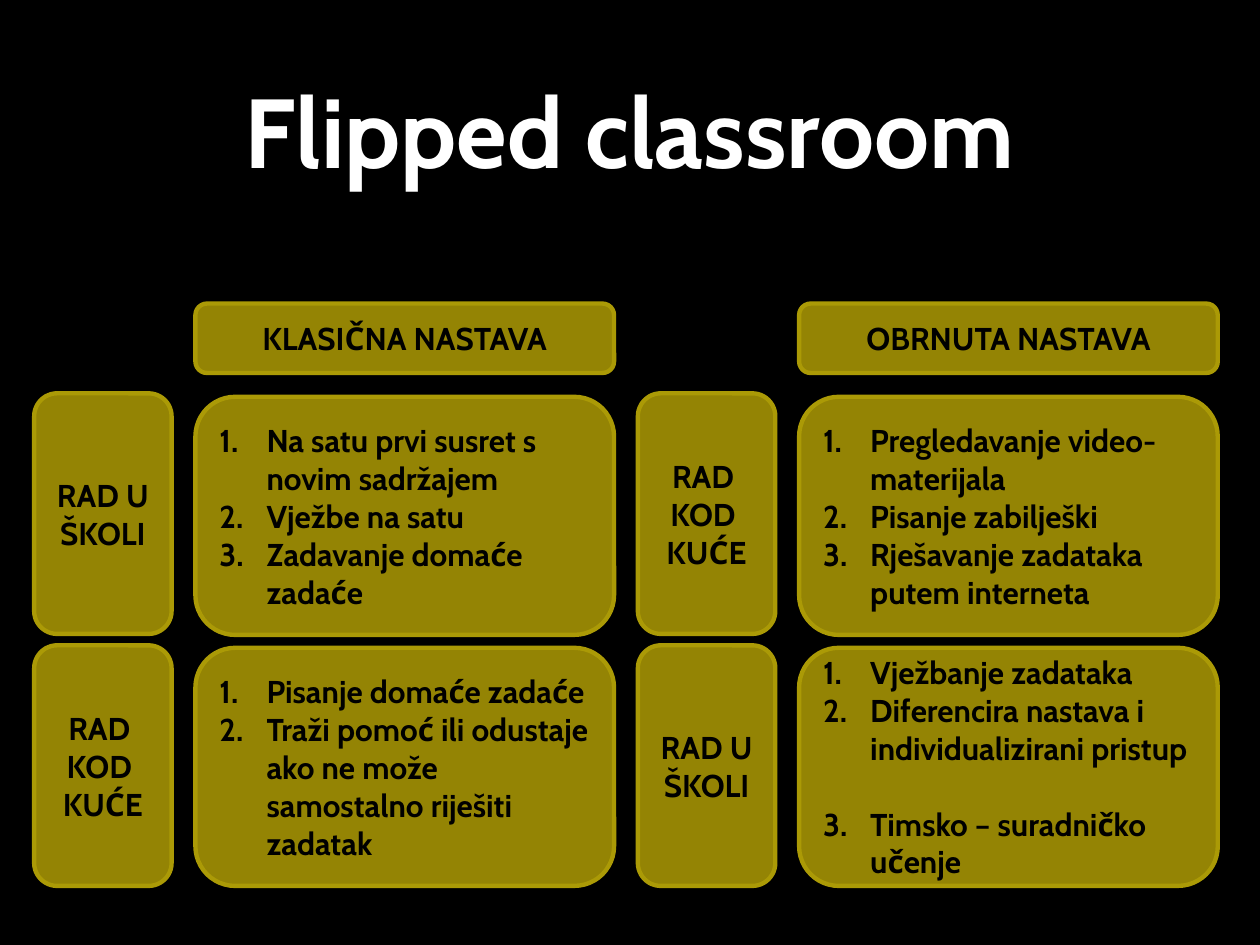
from dataclasses import dataclass

from lxml import etree
from pptx import Presentation
from pptx import util as u
from pptx.dml.color import RGBColor
from pptx.enum import shapes, text
from pptx.oxml.ns import qn

HUE = {"back": "000000", "title": "FFFFFF", "ink": "000000",
       "fill": "F2D908", "edge": "AB9A06"}
FONT = "Cabin"
ALPHA = 61000
INDENT = u.Cm(0.95)
GAP = 21.6


@dataclass
class Row:
    label: list[str]
    items: list[str]
    gap_at: int = -1


@dataclass
class Group:
    left: float
    head: str
    rows: list[Row]


SCHOOL = ["RAD U ŠKOLI"]
HOME = ["RAD ", "KOD ", "KUĆE"]
GROUPS = [
    Group(0.69, "KLASIČNA NASTAVA", [
        Row(SCHOOL, ["Na satu prvi susret s novim sadržajem",
                     "Vježbe na satu", "Zadavanje domaće zadaće"]),
        Row(HOME, ["Pisanje domaće zadaće",
                   "Traži pomoć ili odustaje ako ne može samostalno "
                   "riješiti zadatak"]),
    ]),
    Group(12.86, "OBRNUTA NASTAVA", [
        Row(HOME, ["Pregledavanje video-materijala", "Pisanje zabilješki",
                   "Rješavanje zadataka putem interneta"]),
        Row(SCHOOL, ["Vježbanje zadataka",
                     "Diferencira nastava i individualizirani pristup",
                     "Timsko – suradničko učenje"], gap_at=2),
    ]),
]


def color(name: str) -> RGBColor:
    return RGBColor.from_string(HUE[name])


def write(shape, lines: list[str], *, size: float = 18, hue: str = "ink",
          numbered: bool = False, gap_at: int = -1) -> None:
    frame = shape.text_frame
    frame.word_wrap = True
    frame.vertical_anchor = text.MSO_ANCHOR.MIDDLE
    for i, line in enumerate(lines):
        para = frame.paragraphs[0] if i == 0 else frame.add_paragraph()
        para.alignment = (text.PP_ALIGN.LEFT if numbered
                          else text.PP_ALIGN.CENTER)
        if i == gap_at:
            para.space_before = u.Pt(GAP)
        if numbered:
            props = para._p.get_or_add_pPr()
            props.set("marL", str(INDENT))
            props.set("indent", str(-INDENT))
            etree.SubElement(props, qn("a:buFont"), typeface="+mj-lt")
            etree.SubElement(props, qn("a:buAutoNum"), type="arabicPeriod")
        run = para.add_run()
        run.text = line
        font = run.font
        font.name, font.size, font.bold = FONT, u.Pt(size), True
        font.color.rgb = color(hue)


def card(slide, left: float, top: float, width: float, height: float):
    box = slide.shapes.add_shape(
        shapes.MSO_SHAPE.ROUNDED_RECTANGLE,
        u.Cm(left), u.Cm(top), u.Cm(width), u.Cm(height))
    box.shadow.inherit = False
    box.fill.solid()
    box.fill.fore_color.rgb = color("fill")
    tint = box._element.spPr.find(qn("a:solidFill"))[0]
    etree.SubElement(tint, qn("a:alpha"), val=str(ALPHA))
    box.line.color.rgb = color("edge")
    box.line.width = u.Pt(2.5)
    return box


def draw(slide, group: Group) -> None:
    wide = group.left + 3.25
    for i, row in enumerate(group.rows):
        body = card(slide, wide, 8 + i * 5.06, 8.44, 4.8)
        write(body, row.items, numbered=True, gap_at=row.gap_at)
        side = card(slide, group.left, 7.93 + i * 5.08, 2.77, 4.85)
        write(side, row.label)
    write(card(slide, wide, 6.12, 8.44, 1.4), [group.head])


def main() -> None:
    deck = Presentation()
    deck.slide_width, deck.slide_height = u.Cm(25.4), u.Cm(19.05)
    slide = deck.slides.add_slide(deck.slide_layouts[5])
    slide.background.fill.solid()
    slide.background.fill.fore_color.rgb = color("back")
    title = slide.shapes.title
    title.left, title.top = u.Cm(2.16), u.Cm(0.3)
    title.width, title.height = u.Cm(21.06), u.Cm(4.6)
    write(title, ["Flipped classroom"], size=56, hue="title")
    for group in GROUPS:
        draw(slide, group)
    deck.save("out.pptx")


if __name__ == "__main__":
    main()
